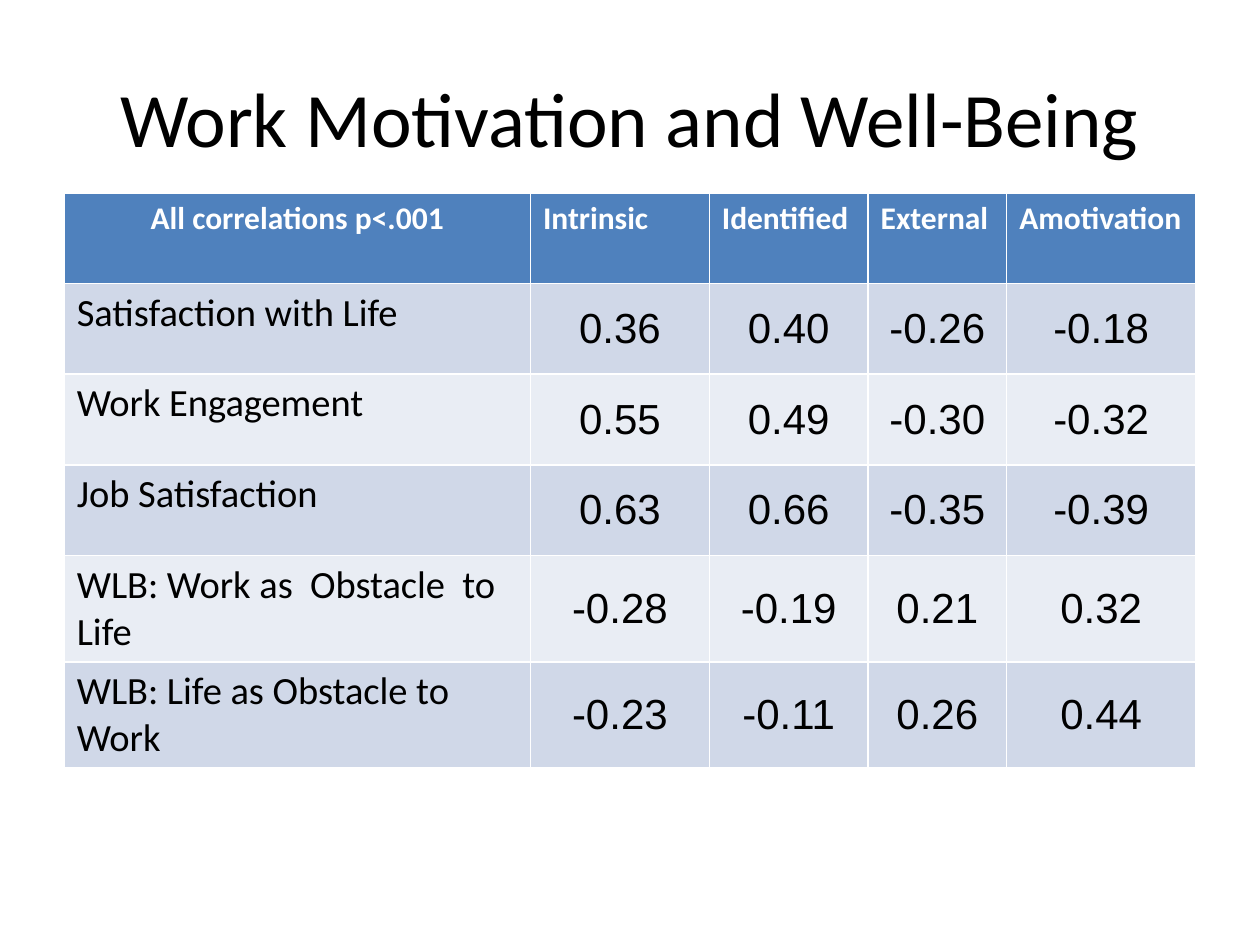
from pptx import Presentation
from pptx.dml.color import RGBColor
from pptx.enum.text import MSO_ANCHOR as Anchor, PP_ALIGN as Align

PX = 9144  # 100 px to the inch
BLACK = RGBColor(0x00, 0x00, 0x00)
WHITE = RGBColor(0xFF, 0xFF, 0xFF)
BLUE = RGBColor(0x4F, 0x81, 0xBD)
BANDS = [RGBColor(0xE9, 0xED, 0xF4), RGBColor(0xD0, 0xD8, 0xE8)]

WIDTHS = [370, 142, 126, 110, 150]
ROW = 72
ROWS = [
    ["All correlations p<.001", "Intrinsic", "Identified", "External", "Amotivation"],
    ["Satisfaction with Life", "0.36", "0.40", "-0.26", "-0.18"],
    ["Work Engagement", "0.55", "0.49", "-0.30", "-0.32"],
    ["Job Satisfaction", "0.63", "0.66", "-0.35", "-0.39"],
    ["WLB: Work as  Obstacle  to Life", "-0.28", "-0.19", "0.21", "0.32"],
    ["WLB: Life as Obstacle to Work", "-0.23", "-0.11", "0.26", "0.44"],
]


def style(para, name, size, color, bold=False):
    font = para.font
    font.name = name
    font.size = size * 12700
    font.color.rgb = color
    font.bold = bold


deck = Presentation()
deck.slide_width, deck.slide_height = 1000 * PX, 750 * PX
slide = deck.slides.add_slide(deck.slide_layouts[5])

title = slide.shapes.title
title.left, title.top, title.width, title.height = [n * PX for n in (50, 30, 900, 125)]
title.text_frame.text = "Work Motivation and Well-Being"
title.text_frame.vertical_anchor = Anchor.MIDDLE
head = title.text_frame.paragraphs[0]
head.alignment = Align.CENTER
style(head, "Calibri", 44, BLACK)

# The default table style draws the white cell borders
frame = slide.shapes.add_table(len(ROWS), len(WIDTHS), 51 * PX, 153 * PX,
                               sum(WIDTHS) * PX, len(ROWS) * ROW * PX)
table = frame.table
for col, width in zip(table.columns, WIDTHS):
    col.width = width * PX

for r, row in enumerate(ROWS):
    table.rows[r].height = ROW * PX
    for c, text in enumerate(row):
        cell = table.cell(r, c)
        cell.text = text
        cell.fill.solid()
        cell.fill.fore_color.rgb = BANDS[r % 2] if r else BLUE
        para = cell.text_frame.paragraphs[0]
        if r == 0:
            style(para, "Calibri", 18, WHITE, True)
            para.alignment = Align.LEFT if c else Align.CENTER
        elif c == 0:
            style(para, "Calibri", 22, BLACK)
        else:
            style(para, "Arial", 24, BLACK)
            para.alignment = Align.CENTER
            cell.vertical_anchor = Anchor.MIDDLE

deck.save("out.pptx")
